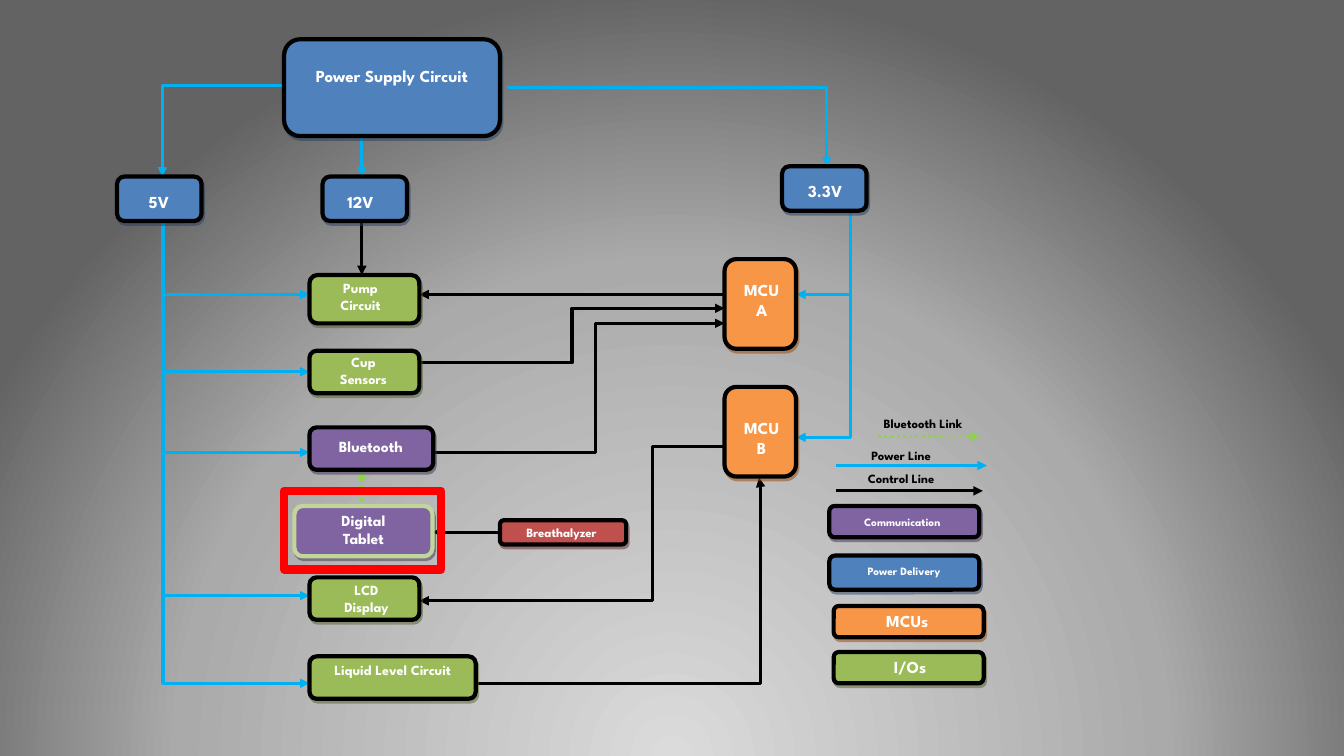
"""Build a block diagram slide of power, control and communication links."""
from itertools import pairwise

from lxml.etree import SubElement
from pptx import Presentation
from pptx.dml.color import RGBColor
from pptx.enum.dml import MSO_LINE_DASH_STYLE as Dash
from pptx.enum.shapes import MSO_CONNECTOR as Link, MSO_SHAPE as Preset
from pptx.enum.text import PP_ALIGN as Align
from pptx.oxml.ns import qn
from pptx.util import Cm, Pt

COLORS = {
    "black": "000000", "white": "FFFFFF", "red": "FF0000",
    "power": "00B0F0", "control": "000000", "bluetooth": "92D050",
    "tablet edge": "C2D69B",
}
KINDS = {
    "mcu": {"fill": "F79646", "shadow": "974706"},
    "io": {"fill": "9BBB59", "shadow": "4E6128"},
    "comm": {"fill": "8064A2", "shadow": "3F3151"},
    "supply": {"fill": "4F81BD", "shadow": "243F60"},
    "sensor": {"fill": "C0504D", "shadow": "622423"},
}
BACKDROP = {0: "DBDBDB", 64: "AAAAAA", 100: "636363"}

deck = Presentation()
deck.slide_width, deck.slide_height = Cm(33.87), Cm(19.05)
page = deck.slides.add_slide(deck.slide_layouts[6])

page.background.fill.gradient()
gradient = page.element.find(".//" + qn("a:gradFill"))
for child in list(gradient):
    gradient.remove(child)
stops = SubElement(gradient, qn("a:gsLst"))
for percent, color in BACKDROP.items():
    stop = SubElement(stops, qn("a:gs"), pos=str(percent * 1000))
    SubElement(stop, qn("a:srgbClr"), val=color)
circle = SubElement(gradient, qn("a:path"), path="circle")
SubElement(circle, qn("a:fillToRect"), l="50000", t="130000", r="50000", b="-30000")


def add_route(kind, start, end, bend=0.5):
    """Draw an arrow; bend is the share of the width before it turns."""
    straight = start[0] == end[0] or start[1] == end[1]
    route = page.shapes.add_connector(
        Link.STRAIGHT if straight else Link.ELBOW, *map(Cm, start + end))
    route.line.color.rgb = RGBColor.from_string(COLORS[kind])
    route.line.width = Pt(2.25)
    if kind == "bluetooth":
        route.line.dash_style = Dash.ROUND_DOT
    properties = route.element.spPr
    if not straight:
        guides = properties.find(qn("a:prstGeom")).get_or_add_avLst()
        SubElement(guides, qn("a:gd"), name="adj1", fmla=f"val {round(bend * 100000)}")
    SubElement(properties.find(qn("a:ln")), qn("a:tailEnd"), type="triangle")
    SubElement(properties, qn("a:effectLst"))


def add_label(text, place, size, color="white"):
    """Place a centred bold label."""
    box = page.shapes.add_textbox(*map(Cm, place))
    box.text_frame.word_wrap = True
    box.text_frame.text = text
    style = {"name": "League Spartan", "size": Pt(size), "bold": True}
    for para in box.text_frame.paragraphs:
        para.alignment = Align.CENTER
        for span in para.runs:
            for name, value in style.items():
                setattr(span.font, name, value)
            span.font.color.rgb = RGBColor.from_string(COLORS[color])


routes = [
    ("power", (9.12, 3.43), (9.12, 4.45)),
    ("power", (12.78, 2.21), (20.85, 4.19), 0.998),
    ("power", (7.16, 2.16), (4.09, 4.45), 0.998),
    ("control", (9.12, 5.56), (9.12, 6.93)),
    ("control", (18.26, 7.42), (10.57, 7.42)),
    ("control", (10.57, 9.14), (18.26, 7.77)),
    ("control", (10.57, 11.4), (18.26, 8.15), 0.578),
    ("control", (18.26, 11.25), (10.57, 15.14), 0.236),
    ("control", (10.57, 17.22), (19.13, 12.04), 1.004),
    ("bluetooth", (9.12, 12.62), (9.12, 11.84)),
    ("control", (12.78, 13.41), (10.9, 13.41)),
    ("control", (21.08, 12.37), (24.77, 12.37)),
    ("power", (21.08, 11.73), (24.87, 11.73)),
    ("bluetooth", (22.12, 11), (24.69, 11)),
]
for route in routes:
    add_route(*route)

rails = [
    (4.09, 7.8, [5.56, 7.42, 9.37, 11.4, 15.01, 17.22]),
    (21.44, 20.07, [5.31, 7.42, 11.02]),
]
for rail, target, levels in rails:
    for top, bottom in pairwise(levels):
        add_route("power", (rail, top), (target, bottom), 0.005)

blocks = [
    ("MCU\nA", "mcu", (18.26, 6.53, 1.8, 2.26), (17.53, 6.93, 3.33, 1.47), 12),
    ("MCU\nB", "mcu", (18.26, 9.75, 1.8, 2.26), (17.53, 10.39, 3.33, 1.35), 12),
    ("Pump\nCircuit", "io", (7.8, 6.93, 2.77, 1.22), (7.42, 6.93, 3.33, 1.35), 10),
    ("Cup\nSensors", "io", (7.8, 8.84, 2.77, 1.07), (7.42, 8.79, 3.48, 1.47), 10),
    ("Bluetooth", "comm", (7.8, 10.77, 3.12, 1.07), (7.57, 10.9, 3.56, 1.47), 11),
    ("LCD\nDisplay", "io", (7.8, 14.55, 2.77, 1.07), (7.57, 14.53, 3.33, 1.52), 10),
    ("Liquid Level Circuit", "io", (7.8, 16.54, 4.19, 1.07), (7.8, 16.54, 4.19, 1.47), 10),
    ("Digital\nTablet", "comm", (7.42, 12.75, 3.48, 1.27), (7.42, 12.75, 3.48, 1.47), 11),
    ("5V", "supply", (2.95, 4.45, 2.13, 1.12), (2.34, 4.7, 3.33, 0.89), 12),
    ("Power Supply Circuit", "supply", (7.16, 0.99, 5.44, 2.44), (7.16, 1.52, 5.44, 1.9), 12),
    ("12V", "supply", (8.13, 4.45, 2.13, 1.12), (7.42, 4.7, 3.33, 0.89), 12),
    ("3.3V", "supply", (19.71, 4.19, 2.13, 1.12), (19.13, 4.42, 3.33, 0.89), 12),
    ("Breathalyzer", "sensor", (12.6, 13.11, 3.18, 0.61), (12.22, 13.11, 3.86, 1.12), 9),
    ("Communication", "comm", (20.9, 12.75, 3.78, 0.79), (20.62, 12.85, 4.24, 0.91), 8),
    ("Power Delivery", "supply", (20.9, 14, 3.78, 0.86), (20.7, 14.1, 4.17, 1.04), 8),
    ("MCUs", "mcu", (21.01, 15.27, 3.78, 0.79), (21.01, 15.27, 3.71, 1.04), 12),
    ("I/Os", "io", (21.01, 16.43, 3.78, 0.79), (21.08, 16.43, 3.71, 0.97), 12),
]
for text, kind, place, label_place, size in blocks:
    block = page.shapes.add_shape(Preset.ROUNDED_RECTANGLE, *map(Cm, place))
    block.fill.solid()
    block.fill.fore_color.rgb = RGBColor.from_string(KINDS[kind]["fill"])
    edge = "tablet edge" if text.endswith("Tablet") else "black"
    block.line.color.rgb = RGBColor.from_string(COLORS[edge])
    block.line.width = Pt(3)
    block.shadow.inherit = False
    effects = block.element.spPr.find(qn("a:effectLst"))
    shadow = SubElement(effects, qn("a:outerShdw"), dist=str(Pt(2.2)),
                        dir=str(63 * 60000), algn="ctr", rotWithShape="0")
    tint = SubElement(shadow, qn("a:srgbClr"), val=KINDS[kind]["shadow"])
    SubElement(tint, qn("a:alpha"), val="50000")
    add_label(text, label_place, size)

line_names = {
    "Bluetooth Link": (20.62, 10.36),
    "Power Line": (20.07, 11.15),
    "Control Line": (20.07, 11.73),
}
for text, corner in line_names.items():
    add_label(text, corner + (5.28, 0.89), 9, "black")

highlight = page.shapes.add_shape(Preset.RECTANGLE, Cm(7.16), Cm(12.37), Cm(3.96), Cm(1.98))
highlight.shadow.inherit = False
highlight.fill.background()
highlight.line.color.rgb = RGBColor.from_string(COLORS["red"])
highlight.line.width = Pt(6)

deck.save("out.pptx")
